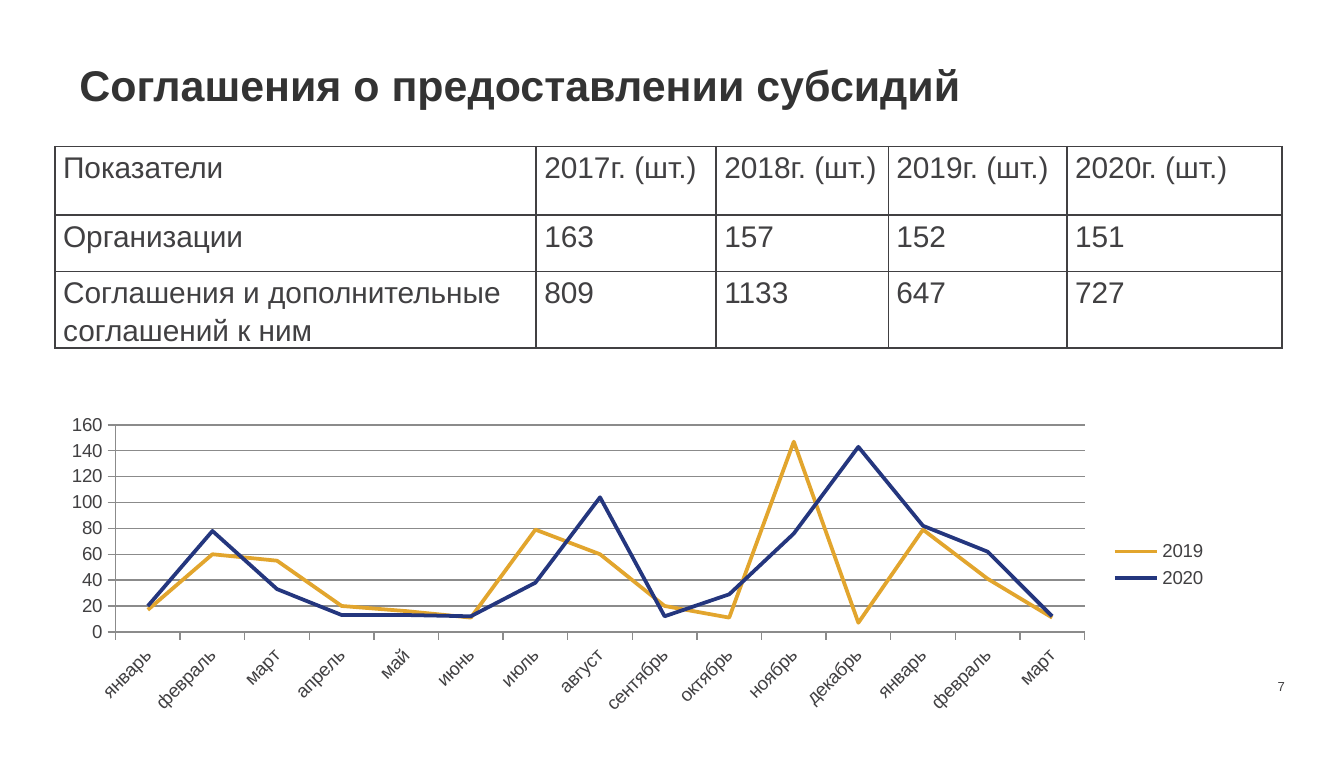
"""Build the slide on subsidy agreements: a yearly table above a monthly line chart."""
from dataclasses import dataclass

from lxml.etree import SubElement
from pptx import Presentation
from pptx.chart.data import CategoryChartData
from pptx.dml.color import RGBColor
from pptx.enum.chart import XL_CHART_TYPE, XL_LEGEND_POSITION, XL_MARKER_STYLE, XL_TICK_MARK
from pptx.enum.text import MSO_ANCHOR, PP_ALIGN
from pptx.oxml import parse_xml
from pptx.oxml.ns import nsdecls, qn
from pptx.slide import Slide
from pptx.table import _Cell
from pptx.text.text import TextFrame
from pptx.util import Inches, Pt


@dataclass(frozen=True)
class Theme:
    font: str = "Arial"
    text: str = "414042"
    title: str = "333333"
    background: str = "FFFFFF"
    grid: str = "8B8B8B"
    title_size: float = 23
    table_size: float = 16
    chart_size: float = 10
    number_size: float = 7


@dataclass(frozen=True)
class Box:
    left: float
    top: float
    width: float
    height: float

    def lengths(self) -> tuple:
        return tuple(Inches(side) for side in (self.left, self.top, self.width, self.height))


@dataclass(frozen=True)
class Series:
    name: str
    color: str
    values: tuple


THEME = Theme()
TITLE_BOX = Box(0.59, 0.47, 7.18, 0.36)
NUMBER_BOX = Box(8.95, 5.01, 0.61, 0.15)
TABLE_BOX = Box(0.41, 1.09, 9.14, 1.5)
CHART_BOX = Box(0.36, 3.04, 8.72, 2.32)
PLOT_BOX = Box(0.86, 3.16, 7.21, 1.54)
COLUMN_WIDTHS = (3.58, 1.34, 1.28, 1.33, 1.6)
ROW_HEIGHTS = (0.51, 0.42, 0.57)
ROWS = (
    ("Показатели", "2017г. (шт.)", "2018г. (шт.)", "2019г. (шт.)", "2020г. (шт.)"),
    ("Организации", "163", "157", "152", "151"),
    ("Соглашения и дополнительные соглашений к ним", "809", "1133", "647", "727"),
)
MONTHS = ("январь", "февраль", "март", "апрель", "май", "июнь", "июль", "август",
          "сентябрь", "октябрь", "ноябрь", "декабрь")
SERIES = (
    Series("2019", "E2A52D", (17, 60, 55, 20, 16, 11, 79, 60, 20, 11, 147, 7, 79, 41, 11)),
    Series("2020", "24367E", (20, 78, 33, 13, 13, 12, 38, 104, 12, 29, 76, 143, 82, 62, 12)),
)


def write_text(frame: TextFrame, text: str, *, size: float, color: str = THEME.text,
               bold: bool = False, align: PP_ALIGN = PP_ALIGN.LEFT,
               spacing: float = 1.0, anchor: MSO_ANCHOR = MSO_ANCHOR.TOP,
               side_margin: float = 0) -> None:
    """Write one formatted paragraph into a text frame."""
    frame.word_wrap = True
    frame.vertical_anchor = anchor
    frame.margin_left = frame.margin_right = Inches(side_margin)
    frame.margin_top = frame.margin_bottom = 0
    paragraph = frame.paragraphs[0]
    paragraph.alignment = align
    paragraph.line_spacing = spacing
    run = paragraph.add_run()
    run.text = text
    run.font.name = THEME.font
    run.font.size = Pt(size)
    run.font.bold = bold
    run.font.color.rgb = RGBColor.from_string(color)


def add_title(slide: Slide, text: str) -> None:
    """Move and format the title placeholder."""
    title = slide.shapes.title
    title.left, title.top, title.width, title.height = TITLE_BOX.lengths()
    write_text(title.text_frame, text, size=THEME.title_size, color=THEME.title,
               bold=True, spacing=0.9, anchor=MSO_ANCHOR.MIDDLE)


def add_borders(cell: _Cell) -> None:
    """Outline all four sides of a cell, ahead of its fill."""
    properties = cell._tc.get_or_add_tcPr()
    for position, side in enumerate(("lnL", "lnR", "lnT", "lnB")):
        properties.insert(position, parse_xml(
            f'<a:{side} {nsdecls("a")} w="{Pt(1)}"><a:solidFill>'
            f'<a:srgbClr val="{THEME.text}"/></a:solidFill></a:{side}>'))


def add_indicator_table(slide: Slide) -> None:
    """Draw the table of yearly indicators."""
    table = slide.shapes.add_table(len(ROWS), len(COLUMN_WIDTHS), *TABLE_BOX.lengths()).table
    table.first_row = table.horz_banding = False
    for column, width in zip(table.columns, COLUMN_WIDTHS):
        column.width = Inches(width)
    for row, height, texts in zip(table.rows, ROW_HEIGHTS, ROWS):
        row.height = Inches(height)
        for cell, text in zip(row.cells, texts):
            cell.fill.solid()
            cell.fill.fore_color.rgb = RGBColor.from_string(THEME.background)
            add_borders(cell)
            write_text(cell.text_frame, text, size=THEME.table_size, spacing=1.15)
            cell.margin_left = cell.margin_right = Inches(0.06)
            cell.margin_top = cell.margin_bottom = 0


def place_plot(plot_area) -> None:
    """Fix the inner plot rectangle as fractions of the chart."""
    for layout in plot_area.findall(qn("c:layout")):
        plot_area.remove(layout)
    layout = parse_xml(f'<c:layout {nsdecls("c")}><c:manualLayout/></c:layout>')
    plot_area.insert(0, layout)
    settings = {
        "layoutTarget": "inner", "xMode": "edge", "yMode": "edge",
        "x": (PLOT_BOX.left - CHART_BOX.left) / CHART_BOX.width,
        "y": (PLOT_BOX.top - CHART_BOX.top) / CHART_BOX.height,
        "w": PLOT_BOX.width / CHART_BOX.width,
        "h": PLOT_BOX.height / CHART_BOX.height,
    }
    for name, value in settings.items():
        SubElement(layout[0], qn(f"c:{name}")).set("val", str(value))


def add_month_chart(slide: Slide) -> None:
    """Draw the line chart of agreements by month."""
    data = CategoryChartData()
    data.categories = MONTHS + MONTHS[:3]
    for series in SERIES:
        data.add_series(series.name, series.values)
    chart = slide.shapes.add_chart(XL_CHART_TYPE.LINE, *CHART_BOX.lengths(), data).chart
    chart.has_title = False
    chart.font.name = THEME.font
    chart.font.size = Pt(THEME.chart_size)
    chart.font.color.rgb = RGBColor.from_string(THEME.text)
    chart.has_legend = True
    chart.legend.position = XL_LEGEND_POSITION.RIGHT
    chart.legend.include_in_layout = False
    plot = chart.plots[0]
    plot.vary_by_categories = False
    for line, series in zip(plot.series, SERIES):
        line.smooth = False
        line.marker.style = XL_MARKER_STYLE.NONE
        line.format.line.width = Pt(2)
        line.format.line.color.rgb = RGBColor.from_string(series.color)
    months, counts = chart.category_axis, chart.value_axis
    counts.minimum_scale, counts.maximum_scale, counts.major_unit = 0, 160, 20
    counts.has_major_gridlines = True
    for axis in (months, counts):
        axis.major_tick_mark = XL_TICK_MARK.OUTSIDE
        axis.tick_labels.font.size = Pt(THEME.chart_size)
    for line in (months.format.line, counts.format.line, counts.major_gridlines.format.line):
        line.width = Pt(0.75)
        line.color.rgb = RGBColor.from_string(THEME.grid)
    months._element.find(qn("c:txPr")).find(qn("a:bodyPr")).set("rot", "-2700000")
    place_plot(chart._chartSpace.chart.plotArea)


def main() -> None:
    """Assemble and save the presentation."""
    presentation = Presentation()
    presentation.slide_width, presentation.slide_height = Inches(10), Inches(5.63)
    slide = presentation.slides.add_slide(presentation.slide_layouts[5])
    add_title(slide, "Соглашения о предоставлении субсидий")
    add_indicator_table(slide)
    add_month_chart(slide)
    number = slide.shapes.add_textbox(*NUMBER_BOX.lengths())
    write_text(number.text_frame, "7", size=THEME.number_size, align=PP_ALIGN.RIGHT,
               anchor=MSO_ANCHOR.BOTTOM)
    presentation.save("out.pptx")


if __name__ == "__main__":
    main()
